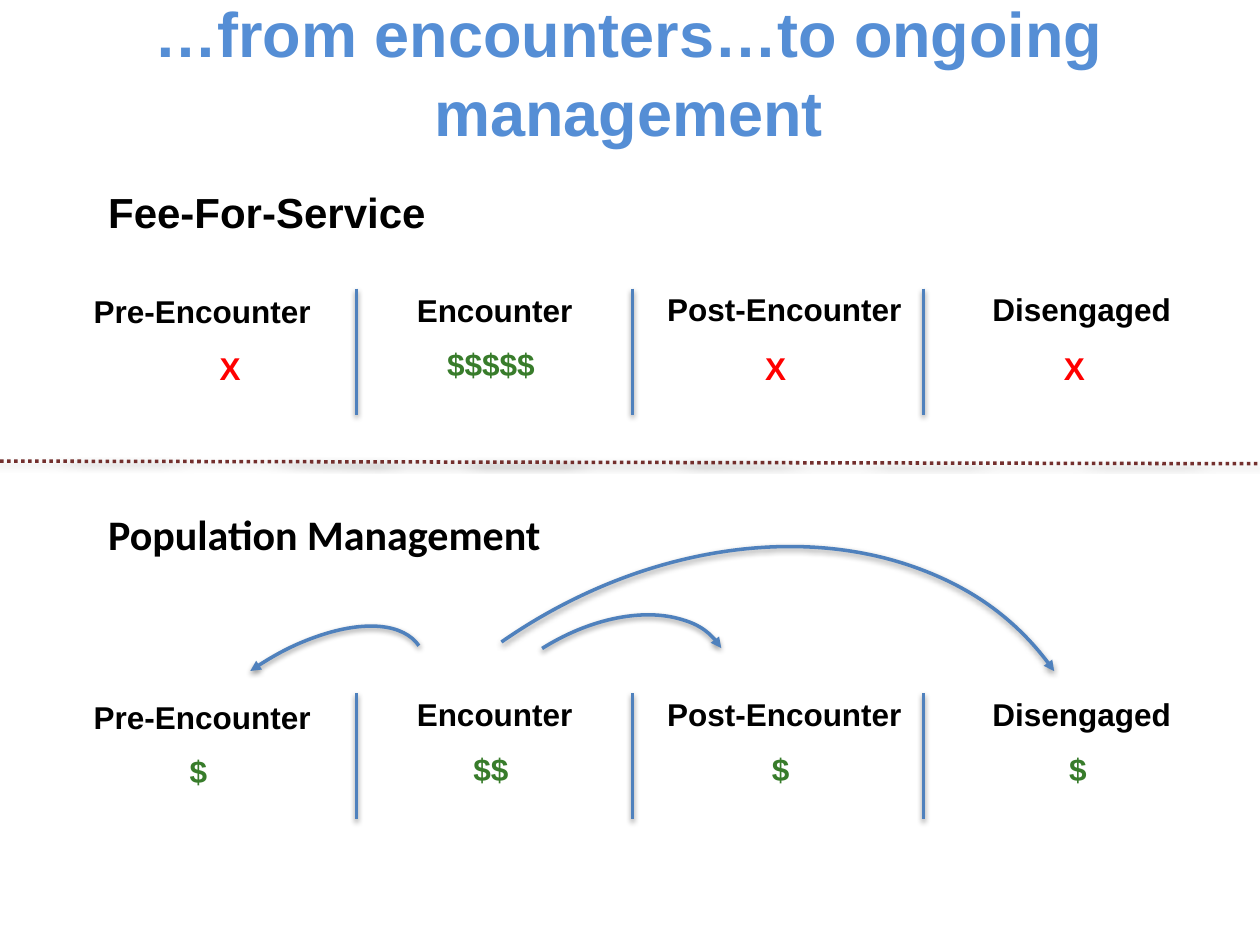
from lxml import etree
from pptx import Presentation
from pptx.dml.color import RGBColor
from pptx.enum.dml import MSO_LINE
from pptx.enum.shapes import MSO_CONNECTOR, MSO_SHAPE
from pptx.enum.text import MSO_ANCHOR, MSO_AUTO_SIZE, PP_ALIGN
from pptx.oxml import parse_xml
from pptx.oxml.ns import nsdecls, qn
from pptx.util import Pt

LEFT, CENTER = PP_ALIGN.LEFT, PP_ALIGN.CENTER
MIDDLE, GROW = MSO_ANCHOR.MIDDLE, MSO_AUTO_SIZE.SHAPE_TO_FIT_TEXT
STRAIGHT, ARC, DOTS = MSO_CONNECTOR.STRAIGHT, MSO_SHAPE.ARC, MSO_LINE.ROUND_DOT

COLORS = {"title": "558ED5", "text": "000000", "money": "387C2B",
          "none": "FF0000", "line": "4F81BD", "split": "732F2D"}
CELL_W, CELL_H = 157.7, 29
RULES = (203.8, 361.4, 527.8)

# Stages: name, left edge
STAGES = (("Pre-Encounter", 36.7), ("Encounter", 203.8),
          ("Post-Encounter", 369.4), ("Disengaged", 539.3))

# Per stage: label drop, mark, its shift from the label's left, mark drop
FEES = ((-1.4, "X", 15.9, 31), (-2.2, "$$$$$", -2.2, 28.8),
        (-2.9, "X", -5.1, 31), (-2.9, "X", -4.3, 31))
POOL = ((-0.7, "$", -2.2, 30.2), (-2.2, "$$", -2.2, 28.8),
        (-2.2, "$", -2.2, 28.8), (-2.2, "$", -2.2, 28.8))

# Arrows: left, top, width, height, turn, end with the arrowhead
ARROWS = ((79.9, 375.8, 175, 85.7, 325.4, "headEnd"),
          (252, 362.2, 173.5, 108.7, 327.8, "tailEnd"),
          (148.3, 331.9, 499, 388.8, 325.1, "tailEnd"))


def add_text(slide, box, text, size, color, align=CENTER, font="Arial"):
    shape = slide.shapes.add_textbox(*map(Pt, box))
    frame = shape.text_frame
    frame.word_wrap = True
    frame.text = text
    para = frame.paragraphs[0]
    para.alignment = align
    face = para.runs[0].font
    face.name, face.size, face.bold = font, Pt(size), True
    face.color.rgb = RGBColor.from_string(COLORS[color])
    return frame


def style_line(shape, color):
    """Set the stroke and the soft shadow below it."""
    shape.line.color.rgb = RGBColor.from_string(COLORS[color])
    shape.line.width = Pt(2)
    shadow = parse_xml(
        f'<a:effectLst {nsdecls("a")}><a:outerShdw blurRad="40000" '
        'dist="20000" dir="5400000" rotWithShape="0"><a:srgbClr val="000000">'
        '<a:alpha val="38000"/></a:srgbClr></a:outerShdw></a:effectLst>')
    shape.line._get_or_add_ln().addnext(shadow)


def add_rule(slide, x1, y1, x2, y2, color="line"):
    rule = slide.shapes.add_connector(STRAIGHT, *map(Pt, (x1, y1, x2, y2)))
    style_line(rule, color)
    return rule


def add_title(slide, box):
    frame = add_text(slide, box, "…from encounters…to ongoing management",
                     36, "title")
    frame.vertical_anchor = MIDDLE
    frame.paragraphs[0].line_spacing = 1.05


def add_model(slide, top, name, font, drop, cells):
    """Heading, stage labels with their payment marks, and dividers."""
    add_text(slide, (54.7, top, 613.4, 48.2), name, 24, "text", LEFT, font)
    base = top + drop
    for x in RULES:
        add_rule(slide, x, base, x, base + 72)
    for (stage, x), (dy, mark, dx, gap) in zip(STAGES, cells):
        color = "none" if mark == "X" else "money"
        for text, left, y, tint in ((stage, x, base + dy, "text"),
                                    (mark, x + dx, base + gap, color)):
            frame = add_text(slide, (left, y, CELL_W, CELL_H), text, 18, tint)
            frame.auto_size = GROW


def add_arrow(slide, box, turn, end):
    arc = slide.shapes.add_shape(ARC, *map(Pt, box))
    arc.rotation = turn
    arc.fill.background()
    style_line(arc, "line")
    etree.SubElement(arc.line._get_or_add_ln(), qn("a:" + end), type="triangle")


def main():
    prs = Presentation()
    prs.slide_width, prs.slide_height = Pt(720), Pt(540)
    slide = prs.slides.add_slide(prs.slide_layouts[6])

    # Two payment models
    add_model(slide, 103, "Fee-For-Service", "Arial", 61.9, FEES)
    add_model(slide, 287.3, "Population Management", "Calibri", 108.7, POOL)

    # Arrows from the encounter to the other stages
    for *box, turn, end in ARROWS:
        add_arrow(slide, box, turn, end)

    add_title(slide, (-0.7, -5, 720, 90))

    # Dotted split between the models
    add_rule(slide, 0, 263.5, 720, 265, "split").line.dash_style = DOTS

    prs.save("out.pptx")


if __name__ == "__main__":
    main()
